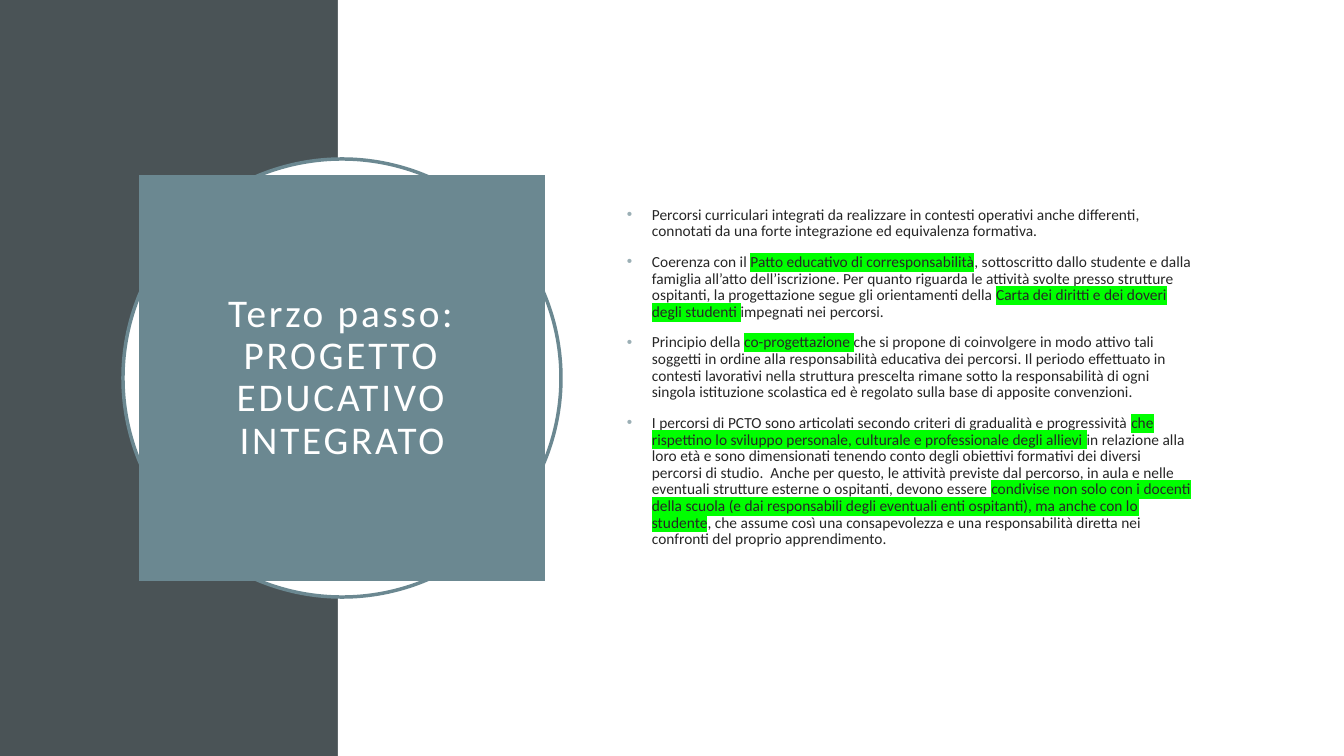
from lxml.etree import SubElement
from pptx import Presentation
from pptx.dml.color import RGBColor
from pptx.enum.shapes import MSO_SHAPE as Shape
from pptx.enum.text import MSO_ANCHOR as Anchor, PP_ALIGN as Align
from pptx.oxml.ns import qn
from pptx.util import Emu, Pt

PAGE_WIDTH, PAGE_HEIGHT = 1344, 756
EMU_PER_PX = 914400 / 100.8
FONT = "Calibri"
SLATE, TEAL, WHITE, INK = "4A5356", "6B8891", "FFFFFF", "262626"
BULLET, MARKER = "9BAFB5", "00FF00"

TITLE = "Terzo passo:\nPROGETTO EDUCATIVO INTEGRATO"
# Text between a pair of bars is highlighted.
POINTS = [
    "Percorsi curriculari integrati da realizzare in contesti operativi anche differenti, "
    "connotati da una forte integrazione ed equivalenza formativa.",
    "Coerenza con il |Patto educativo di corresponsabilità|, sottoscritto dallo studente e dalla "
    "famiglia all’atto dell’iscrizione. Per quanto riguarda le attività svolte presso strutture "
    "ospitanti, la progettazione segue gli orientamenti della |Carta dei diritti e dei doveri "
    "degli studenti |impegnati nei percorsi.",
    "Principio della |co-progettazione |che si propone di coinvolgere in modo attivo tali "
    "soggetti in ordine alla responsabilità educativa dei percorsi. Il periodo effettuato in "
    "contesti lavorativi nella struttura prescelta rimane sotto la responsabilità di ogni "
    "singola istituzione scolastica ed è regolato sulla base di apposite convenzioni.",
    "I percorsi di PCTO sono articolati secondo criteri di gradualità e progressività |che "
    "rispettino lo sviluppo personale, culturale e professionale degli allievi |in relazione alla "
    "loro età e sono dimensionati tenendo conto degli obiettivi formativi dei diversi "
    "percorsi di studio.  Anche per questo, le attività previste dal percorso, in aula e nelle "
    "eventuali strutture esterne o ospitanti, devono essere |condivise non solo con i docenti "
    "della scuola (e dai responsabili degli eventuali enti ospitanti), ma anche con lo "
    "studente|, che assume così una consapevolezza e una responsabilità diretta nei "
    "confronti del proprio apprendimento.",
]


def px(length):
    return Emu(round(length * EMU_PER_PX))


def color(hex_code):
    return RGBColor.from_string(hex_code)


def add_filled(page, kind, box, fill, line=None):
    shape = page.shapes.add_shape(kind, *map(px, box))
    shape.shadow.inherit = False
    shape.fill.solid()
    shape.fill.fore_color.rgb = color(fill)
    if line:
        shape.line.color.rgb = color(line)
        shape.line.width = Pt(2.5)
    else:
        shape.line.fill.background()
    return shape


def style_span(span, size, ink, highlight=None):
    span.font.size = Pt(size)
    span.font.color.rgb = color(ink)
    if highlight:
        marker = SubElement(span.font._element, qn("a:highlight"))
        SubElement(marker, qn("a:srgbClr"), val=highlight)
    span.font.name = FONT


def set_bullet(para):
    props = para._p.get_or_add_pPr()
    props.set("marL", str(px(25)))
    props.set("indent", str(-px(25)))
    bullet_color = SubElement(props, qn("a:buClr"))
    SubElement(bullet_color, qn("a:srgbClr"), val=BULLET)
    SubElement(props, qn("a:buFont"), typeface="Arial")
    SubElement(props, qn("a:buChar"), char="•")


def add_background(page, box):
    left, top, width, height = box
    band = 338
    add_filled(page, Shape.RECTANGLE, (left, top, band, height), SLATE)
    add_filled(page, Shape.RECTANGLE, (left + band, top, width - band, height), WHITE)


def add_title(page, box):
    """Draw a ring filling the box and the title square centred in it."""
    left, top, width, height = box
    gap = 16
    add_filled(page, Shape.OVAL, box, WHITE, TEAL)
    square = add_filled(page, Shape.RECTANGLE,
                        (left + gap, top + gap, width - 2 * gap, height - 2 * gap), TEAL)
    frame = square.text_frame
    frame.word_wrap = True
    frame.vertical_anchor = Anchor.MIDDLE
    frame.margin_left = frame.margin_right = px(20)
    frame.margin_top = frame.margin_bottom = px(20)
    para = frame.paragraphs[0]
    para.text = TITLE
    para.alignment = Align.CENTER
    para.line_spacing = 0.9
    for span in para.runs:
        style_span(span, 28, WHITE)
        span.font._element.set("spc", "200")


def add_points(page, box):
    frame = page.shapes.add_textbox(*map(px, box)).text_frame
    frame.word_wrap = True
    frame.vertical_anchor = Anchor.MIDDLE
    for index, point in enumerate(POINTS):
        para = frame.add_paragraph() if index else frame.paragraphs[0]
        para.line_spacing = 0.9
        para.space_before = Pt(10)
        set_bullet(para)
        for part, words in enumerate(point.split("|")):
            span = para.add_run()
            span.text = words
            style_span(span, 11, INK, MARKER if part % 2 else None)


def main():
    deck = Presentation()
    deck.slide_width, deck.slide_height = px(PAGE_WIDTH), px(PAGE_HEIGHT)
    page = deck.slides.add_slide(deck.slide_layouts[6])
    add_background(page, (0, 0, PAGE_WIDTH, PAGE_HEIGHT))
    add_title(page, (123, 159, 438, 438))
    add_points(page, (617, 154, 587, 447))
    deck.save("out.pptx")


if __name__ == "__main__":
    main()
